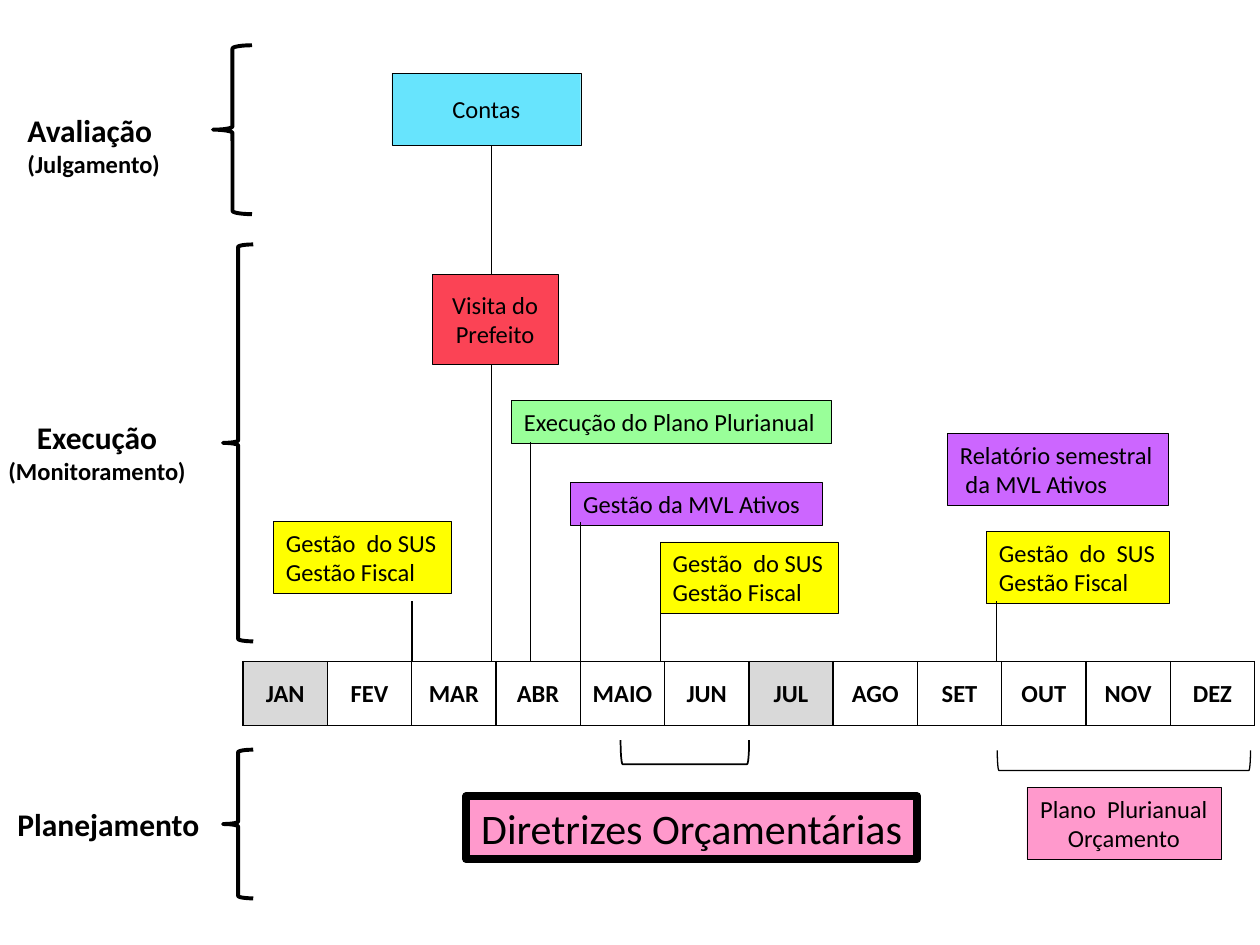
from dataclasses import dataclass

from lxml.etree import SubElement
from pptx import Presentation
from pptx.dml.color import RGBColor
from pptx.enum.shapes import MSO_CONNECTOR as Connector, MSO_SHAPE as Preset
from pptx.enum.text import MSO_ANCHOR as Anchor, MSO_AUTO_SIZE as AutoSize, PP_ALIGN as Align
from pptx.oxml.ns import qn
from pptx.util import Inches, Pt


@dataclass(frozen=True)
class Theme:
    font: str = "Calibri"
    black: str = "000000"
    white: str = "FFFFFF"
    gray: str = "D9D9D9"
    blue: str = "67E4FD"
    red: str = "FB4355"
    green: str = "99FF99"
    yellow: str = "FFFF00"
    purple: str = "CC66FF"
    pink: str = "FF99CC"
    body: int = 14
    heading: int = 18
    highlight: int = 24


THEME = Theme()


@dataclass(frozen=True)
class Box:
    left: float
    top: float
    width: float
    height: float
    lines: tuple[str, ...]
    fill: str
    centered: bool = False
    fixed: bool = False
    size: int = THEME.body
    border: float = 0.25


@dataclass(frozen=True)
class Stem:
    x: float
    bottom: float
    top: float
    weight: float = 0.75


@dataclass(frozen=True)
class Phase:
    left: float
    top: float
    width: float
    height: float
    lines: tuple[str, ...]
    centered: bool = False


@dataclass(frozen=True)
class Bracket:
    preset: Preset
    left: float
    top: float
    width: float
    height: float
    weight: float = 2.25
    rotation: int = 0


MONTHS = ("JAN", "FEV", "MAR", "ABR", "MAIO", "JUN", "JUL", "AGO", "SET", "OUT", "NOV", "DEZ")
RECESS = ("JAN", "JUL")
TABLE_LEFT, TABLE_TOP, TABLE_WIDTH, TABLE_HEIGHT = 1.93, 5.25, 8.03, 0.51

PHASES = (
    Phase(-0.04, 3.27, 1.62, 0.64, ("Execução", "(Monitoramento)"), centered=True),
    Phase(0.12, 0.83, 1.26, 0.64, ("Avaliação", "(Julgamento)")),
    Phase(0.04, 6.34, 1.66, 0.4, ("Planejamento",)),
)
BRACKETS = (
    Bracket(Preset.LEFT_BRACE, 1.69, 0.36, 0.31, 1.34),
    Bracket(Preset.LEFT_BRACE, 1.77, 1.94, 0.24, 3.15),
    Bracket(Preset.LEFT_BRACE, 1.77, 5.95, 0.24, 1.18),
    Bracket(Preset.LEFT_BRACKET, 5.34, 5.46, 0.19, 1.02, 1, 270),
    Bracket(Preset.LEFT_BRACKET, 8.84, 5.03, 0.16, 2.01, 0.75, 270),
)
ACCOUNTS_STEM = Stem(3.9, TABLE_TOP, 1.15, 0.25)
STEMS = (
    Stem(3.27, TABLE_TOP, 4.77),
    Stem(7.91, TABLE_TOP, 4.77),
    Stem(4.21, TABLE_TOP, 3.51),
    Stem(5.24, TABLE_TOP, 4.77),
    Stem(4.61, TABLE_TOP, 4.14),
)
HEALTH_REPORT = ("Gestão  do SUS", "Gestão Fiscal")
BOXES = (
    Box(3.11, 0.58, 1.5, 0.57, ("Contas",), THEME.blue, centered=True, fixed=True),
    Box(3.43, 2.18, 1, 0.71, ("Visita do", "Prefeito"), THEME.red, centered=True, fixed=True),
    Box(4.06, 3.18, 2.54, 0.34, ("Execução do Plano Plurianual",), THEME.green),
    Box(4.53, 3.83, 2, 0.34, ("Gestão da MVL Ativos",), THEME.purple),
    Box(7.52, 3.44, 1.75, 0.57, ("Relatório semestral", " da MVL Ativos"), THEME.purple),
    Box(2.17, 4.14, 1.41, 0.57, HEALTH_REPORT, THEME.yellow),
    Box(5.24, 4.3, 1.41, 0.57, HEALTH_REPORT, THEME.yellow),
    Box(7.83, 4.22, 1.45, 0.57, ("Gestão  do  SUS", "Gestão Fiscal"), THEME.yellow),
    Box(3.7, 6.32, 3.58, 0.5, ("Diretrizes Orçamentárias",), THEME.pink,
        centered=True, size=THEME.highlight, border=4.5),
    Box(8.15, 6.25, 1.54, 0.57, ("Plano  Plurianual", "Orçamento"), THEME.pink, centered=True),
)


def color(value: str) -> RGBColor:
    return RGBColor.from_string(value)


def frame(item) -> tuple:
    return tuple(Inches(value) for value in (item.left, item.top, item.width, item.height))


def style_line(shape, weight: float) -> None:
    shape.line.color.rgb = color(THEME.black)
    shape.line.width = Pt(weight)


def write_paragraph(paragraph, text: str, size: int, align: Align, bold: bool = False) -> None:
    paragraph.text = text
    paragraph.alignment = align
    paragraph.font.name = THEME.font
    paragraph.font.size = Pt(size)
    paragraph.font.bold = bold
    paragraph.font.color.rgb = color(THEME.black)


def write_lines(text_frame, lines: tuple[str, ...], sizes: tuple[int, ...],
                centered: bool, bold: bool = False) -> None:
    for index, (text, size) in enumerate(zip(lines, sizes)):
        paragraph = text_frame.add_paragraph() if index else text_frame.paragraphs[0]
        write_paragraph(paragraph, text, size, Align.CENTER if centered else Align.LEFT, bold)


def fit_to_text(text_frame) -> None:
    text_frame.word_wrap = False
    text_frame.auto_size = AutoSize.SHAPE_TO_FIT_TEXT
    text_frame.vertical_anchor = Anchor.TOP


def draw_box(slide, box: Box) -> None:
    shape = slide.shapes.add_shape(Preset.RECTANGLE, *frame(box))
    shape.shadow.inherit = False
    shape.fill.solid()
    shape.fill.fore_color.rgb = color(box.fill)
    style_line(shape, box.border)
    if not box.fixed:
        fit_to_text(shape.text_frame)
    write_lines(shape.text_frame, box.lines, (box.size,) * len(box.lines), box.centered)


def draw_phase(slide, phase: Phase) -> None:
    text_frame = slide.shapes.add_textbox(*frame(phase)).text_frame
    fit_to_text(text_frame)
    write_lines(text_frame, phase.lines, (THEME.heading, THEME.body), phase.centered, bold=True)


def draw_bracket(slide, bracket: Bracket) -> None:
    shape = slide.shapes.add_shape(bracket.preset, *frame(bracket))
    shape.shadow.inherit = False
    shape.fill.background()
    shape.rotation = bracket.rotation
    style_line(shape, bracket.weight)


def draw_stem(slide, stem: Stem) -> None:
    connector = slide.shapes.add_connector(
        Connector.STRAIGHT, Inches(stem.x), Inches(stem.bottom), Inches(stem.x), Inches(stem.top))
    style_line(connector, stem.weight)
    SubElement(connector._element.spPr, qn("a:effectLst"))


def border_cell(cell) -> None:
    properties = cell._tc.get_or_add_tcPr()
    for index, side in enumerate(("a:lnL", "a:lnR", "a:lnT", "a:lnB")):
        line = properties.makeelement(qn(side), {"w": str(Pt(1))})
        fill = SubElement(line, qn("a:solidFill"))
        SubElement(fill, qn("a:srgbClr"), val=THEME.black)
        properties.insert(index, line)


def draw_calendar(slide) -> None:
    table = slide.shapes.add_table(
        1, len(MONTHS), Inches(TABLE_LEFT), Inches(TABLE_TOP),
        Inches(TABLE_WIDTH), Inches(TABLE_HEIGHT)).table
    table.first_row = table.horz_banding = False
    for cell, month in zip(table.iter_cells(), MONTHS):
        cell.margin_left = cell.margin_right = cell.margin_top = cell.margin_bottom = 0
        cell.vertical_anchor = Anchor.MIDDLE
        cell.fill.solid()
        cell.fill.fore_color.rgb = color(THEME.gray if month in RECESS else THEME.white)
        write_paragraph(cell.text_frame.paragraphs[0], month, THEME.body, Align.CENTER, bold=True)
        border_cell(cell)


def main() -> None:
    presentation = Presentation()
    presentation.slide_width, presentation.slide_height = Inches(10), Inches(7.5)
    slide = presentation.slides.add_slide(presentation.slide_layouts[6])
    draw_calendar(slide)
    for phase in PHASES:
        draw_phase(slide, phase)
    for bracket in BRACKETS:
        draw_bracket(slide, bracket)
    draw_stem(slide, ACCOUNTS_STEM)
    for box in BOXES:
        draw_box(slide, box)
    for stem in STEMS:
        draw_stem(slide, stem)
    presentation.save("out.pptx")


if __name__ == "__main__":
    main()
